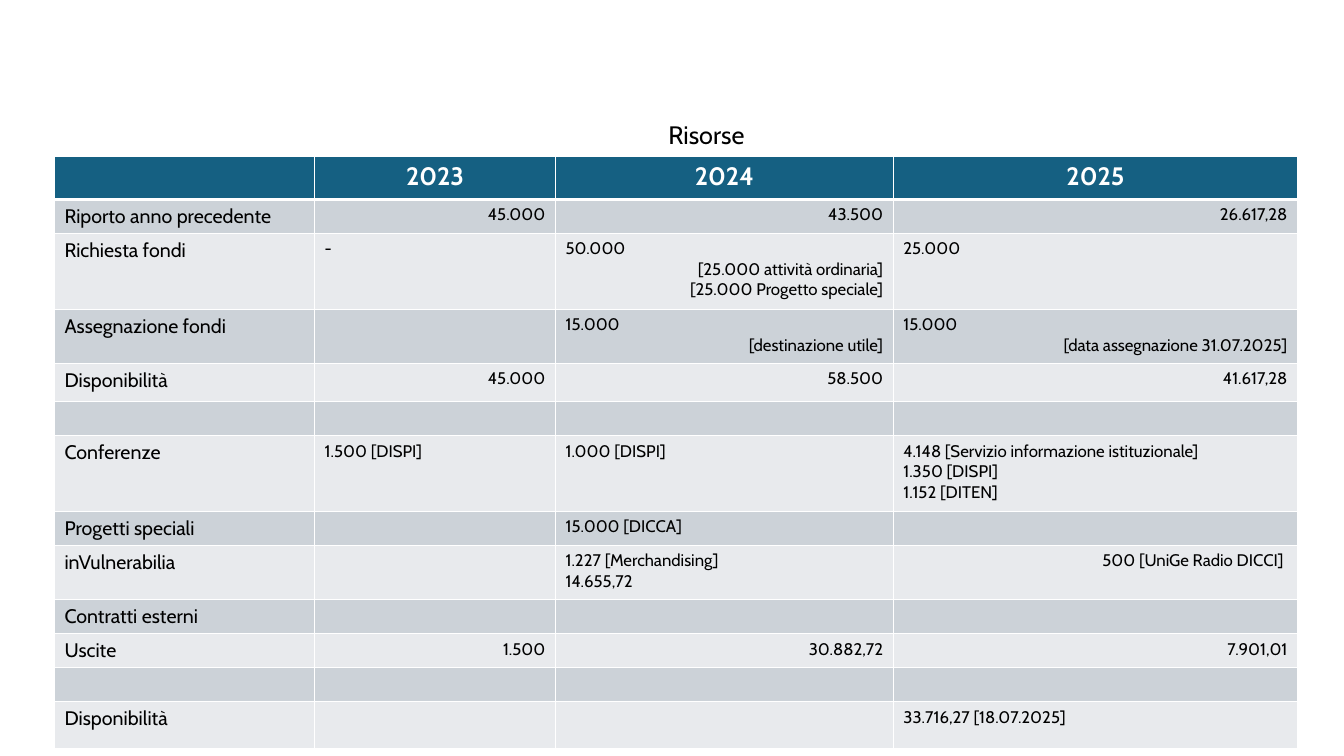
"""Build the slide with the table of yearly resources."""
from dataclasses import dataclass

from lxml.etree import SubElement
from pptx import Presentation
from pptx.dml.color import RGBColor
from pptx.enum.text import MSO_ANCHOR, MSO_AUTO_SIZE, PP_ALIGN
from pptx.oxml.ns import qn
from pptx.slide import Slide
from pptx.table import _Cell
from pptx.text.text import _Paragraph
from pptx.util import Emu, Pt

EMU_PER_PX = 9144


@dataclass(frozen=True)
class Theme:
    """Colours, font and type sizes of the slide."""
    font: str = "Cabin"
    ink: str = "000000"
    paper: str = "FFFFFF"
    header: str = "156082"
    bands: tuple[str, str] = ("CCD2D8", "E8EAED")
    title_size: int = 18
    label_size: int = 14
    value_size: int = 12
    border: int = 1
    header_rule: int = 3


@dataclass(frozen=True)
class Line:
    """One paragraph of a table cell."""
    text: str
    align: PP_ALIGN = PP_ALIGN.LEFT


@dataclass(frozen=True)
class Row:
    """One table row: its height in px and the lines of each cell."""
    height: int
    cells: tuple[tuple[Line, ...], ...]


THEME = Theme()
TABLE_LEFT, TABLE_TOP = 54, 155
COLUMN_WIDTHS = (258, 239, 335, 401)


def px(length: int) -> Emu:
    """Turn px into EMU."""
    return Emu(length * EMU_PER_PX)


def left(*texts: str) -> tuple[Line, ...]:
    """Return left-aligned lines."""
    return tuple(Line(text) for text in texts)


def right(*texts: str) -> tuple[Line, ...]:
    """Return right-aligned lines."""
    return tuple(Line(text, PP_ALIGN.RIGHT) for text in texts)


def center(text: str) -> tuple[Line, ...]:
    """Return one centred line."""
    return (Line(text, PP_ALIGN.CENTER),)


EMPTY: tuple[Line, ...] = ()
ROWS = (
    Row(43, (EMPTY, center("2023"), center("2024"), center("2025"))),
    Row(33, (left("Riporto anno precedente"), right("45.000"), right("43.500"), right("26.617,28"))),
    Row(75, (left("Richiesta fondi"), left("-"),
             left("50.000") + right("[25.000 attività ordinaria]", "[25.000 Progetto speciale]"),
             left("25.000"))),
    Row(54, (left("Assegnazione fondi"), EMPTY,
             left("15.000") + right("[destinazione utile]"),
             left("15.000") + right("[data assegnazione 31.07.2025]"))),
    Row(38, (left("Disponibilità"), right("45.000"), right("58.500"), right("41.617,28"))),
    Row(33, (EMPTY,) * 4),
    Row(75, (left("Conferenze"), left("1.500 [DISPI]"), left("1.000 [DISPI]"),
             left("4.148 [Servizio informazione istituzionale]", "1.350 [DISPI]", "1.152 [DITEN]"))),
    Row(33, (left("Progetti speciali"), EMPTY, left("15.000 [DICCA]"), EMPTY)),
    Row(54, (left("inVulnerabilia"), EMPTY, left("1.227 [Merchandising]", "14.655,72"),
             right("500 [UniGe Radio DICCI] "))),
    Row(33, (left("Contratti esterni"), EMPTY, EMPTY, EMPTY)),
    Row(33, (left("Uscite"), right("1.500"), right("30.882,72"), right("7.901,01"))),
    Row(33, (EMPTY,) * 4),
    Row(47, (left("Disponibilità"), EMPTY, EMPTY, left("33.716,27 [18.07.2025]"))),
)


def write(para: _Paragraph, line: Line, size: int, color: str, bold: bool = False) -> None:
    """Write one formatted line into a paragraph."""
    para.alignment = line.align
    span = para.add_run()
    span.text = line.text
    for name, value in {"name": THEME.font, "size": Pt(size), "bold": bold}.items():
        setattr(span.font, name, value)
    span.font.color.rgb = RGBColor.from_string(color)


def draw_borders(cell: _Cell, is_header: bool) -> None:
    """Draw the four borders of a cell."""
    properties = cell._tc.get_or_add_tcPr()
    bottom = THEME.header_rule if is_header else THEME.border
    widths = {"lnL": THEME.border, "lnR": THEME.border, "lnT": THEME.border, "lnB": bottom}
    for side, width in widths.items():
        border = SubElement(properties, qn(f"a:{side}"), w=str(Pt(width)))
        fill = SubElement(border, qn("a:solidFill"))
        SubElement(fill, qn("a:srgbClr"), val=THEME.paper)


def fill_cell(cell: _Cell, lines: tuple[Line, ...], row: int, column: int) -> None:
    """Format one cell by its place and write its lines."""
    is_header = row == 0
    body_size = THEME.label_size if column == 0 else THEME.value_size
    size = THEME.title_size if is_header else body_size
    draw_borders(cell, is_header)
    cell.fill.solid()
    fill = THEME.header if is_header else THEME.bands[(row - 1) % 2]
    cell.fill.fore_color.rgb = RGBColor.from_string(fill)
    frame = cell.text_frame
    for index, line in enumerate(lines):
        para = frame.paragraphs[0] if index == 0 else frame.add_paragraph()
        write(para, line, size, THEME.paper if is_header else THEME.ink, is_header)
    if not lines:
        end = SubElement(frame.paragraphs[0]._p, qn("a:endParaRPr"), sz=str(size * 100))
        SubElement(end, qn("a:latin"), typeface=THEME.font)


def add_title(page: Slide) -> None:
    """Place the title above the table."""
    title = page.shapes.title
    place = {"left": 653, "top": 113, "width": 101, "height": 40}
    for name, value in place.items():
        setattr(title, name, px(value))
    frame = title.text_frame
    settings = {"word_wrap": False, "auto_size": MSO_AUTO_SIZE.NONE, "vertical_anchor": MSO_ANCHOR.TOP}
    for name, value in settings.items():
        setattr(frame, name, value)
    write(frame.paragraphs[0], Line("Risorse"), THEME.title_size, THEME.ink)


def add_resources(page: Slide) -> None:
    """Add the table of resources."""
    frame = page.shapes.add_table(
        len(ROWS), len(COLUMN_WIDTHS), px(TABLE_LEFT), px(TABLE_TOP),
        px(sum(COLUMN_WIDTHS)), px(sum(row.height for row in ROWS)))
    table = frame.table
    table.horz_banding = False
    for column, width in zip(table.columns, COLUMN_WIDTHS):
        column.width = px(width)
    for row_index, row in enumerate(ROWS):
        table.rows[row_index].height = px(row.height)
        for column_index, lines in enumerate(row.cells):
            fill_cell(table.cell(row_index, column_index), lines, row_index, column_index)


def main() -> None:
    """Build and save the deck."""
    deck = Presentation()
    deck.slide_width, deck.slide_height = px(1333), px(750)
    page = deck.slides.add_slide(deck.slide_layouts[5])
    add_resources(page)
    add_title(page)
    deck.save("out.pptx")


if __name__ == "__main__":
    main()
